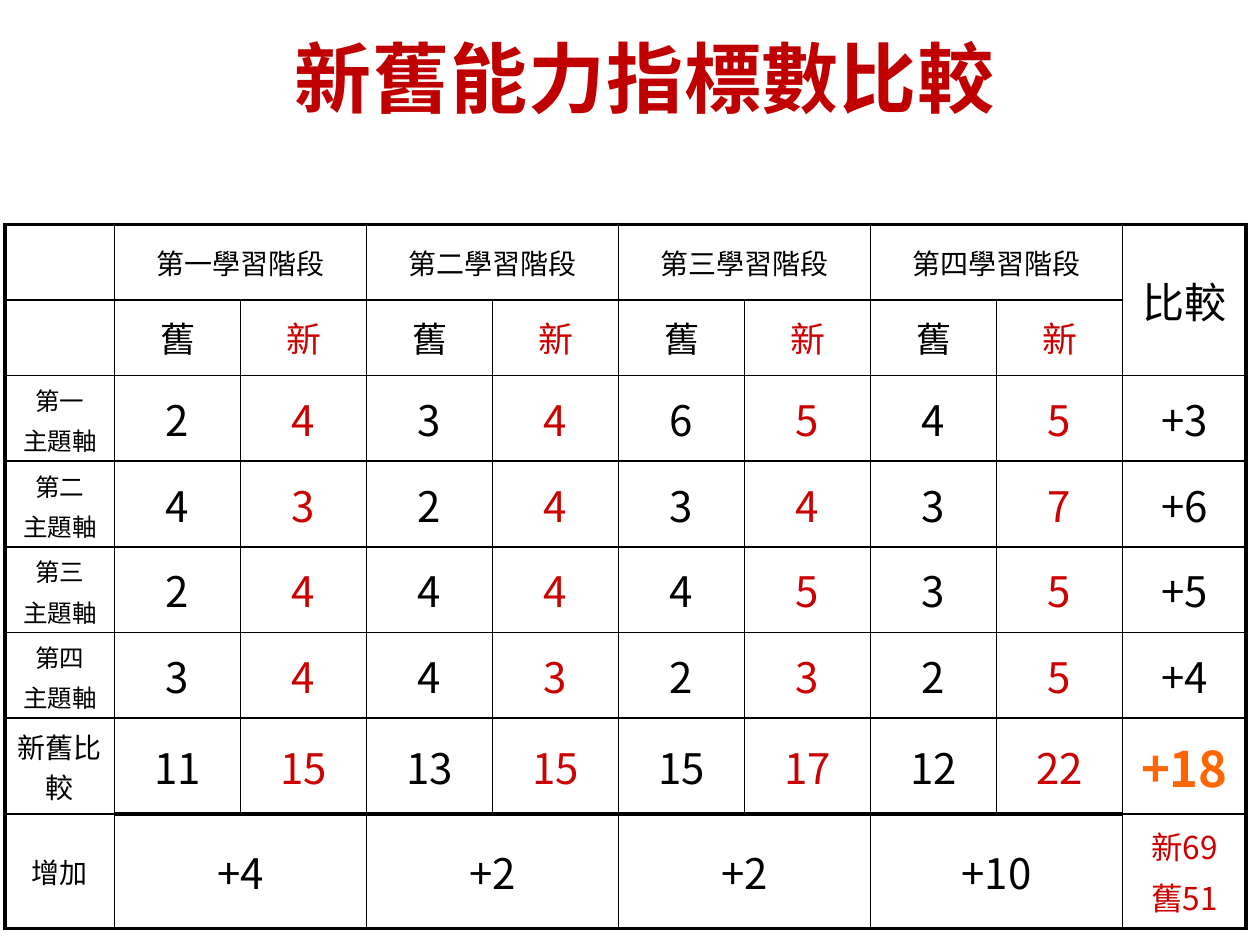
from pptx import Presentation
from pptx.dml.color import RGBColor
from pptx.enum.text import MSO_ANCHOR, PP_ALIGN
from pptx.oxml.ns import qn
from pptx.util import Inches, Pt
from lxml import etree

CENTER = PP_ALIGN.CENTER
MIDDLE = MSO_ANCHOR.MIDDLE

BLACK, RED, DARK_RED, ORANGE = "000000", "CC0000", "C00000", "FF6600"
COLS = [0.87] + [1] * 8 + [0.98]
ROWS = [0.6] * 2 + [0.68] * 4 + [0.76, 0.91]
STAGES = ["第一", "第二", "第三", "第四"]
COUNTS = [
    [2, 4, 3, 4, 6, 5, 4, 5, "+3"],
    [4, 3, 2, 4, 3, 4, 3, 7, "+6"],
    [2, 4, 4, 4, 4, 5, 3, 5, "+5"],
    [3, 4, 4, 3, 2, 3, 2, 5, "+4"],
]
TOTALS = [11, 15, 13, 15, 15, 17, 12, 22]
INCREASES = ["+4", "+2", "+2", "+10"]


def rgb(value):
    return RGBColor.from_string(value)


def write(tf, text, font, size, color=BLACK, bold=False, spacing=None):
    for i, line in enumerate(str(text).split("\n")):
        p = tf.paragraphs[0] if i == 0 else tf.add_paragraph()
        p.alignment = CENTER
        if i:
            p.space_before = Pt(size * 0.2)
        r = p.add_run()
        r.text = line
        r.font.name, r.font.size, r.font.bold = font, Pt(size), bold
        r.font.color.rgb = rgb(color)
        rPr = r.font._element
        etree.SubElement(rPr, qn("a:ea"), typeface=font)
        if spacing:
            rPr.set("spc", str(int(spacing * 100)))


class Deck:
    """Holds the style and the current slide."""

    title_font = "DejaVu Sans"
    body_font = "Noto Sans CJK SC"
    thin, thick = 1, 2.25

    def __init__(self, width, height):
        self.prs = Presentation()
        self.prs.slide_width, self.prs.slide_height = Inches(width), Inches(height)
        self.s = self.prs.slides.add_slide(self.prs.slide_layouts[6])

    def title(self, text, x, y, w, h):
        tf = self.s.shapes.add_textbox(Inches(x), Inches(y), Inches(w), Inches(h)).text_frame
        tf.word_wrap = True
        tf.vertical_anchor = MIDDLE
        write(tf, text, self.title_font, 44, DARK_RED, bold=True, spacing=0.5)

    def table(self, x, y, cols, rows):
        frame = self.s.shapes.add_table(len(rows), len(cols), Inches(x), Inches(y),
                                        Inches(sum(cols)), Inches(sum(rows)))
        table = frame.table
        table.first_row = table.horz_banding = False
        for column, width in zip(table.columns, cols):
            column.width = Inches(width)
        for row, height in zip(table.rows, rows):
            row.height = Inches(height)
        last_row, last_col = len(rows) - 1, len(cols) - 1
        for i in range(len(rows)):
            for j in range(len(cols)):
                inner = 0 < j < last_col
                self.borders(table.cell(i, j), {
                    "L": j == 0,
                    "R": j == last_col,
                    "T": i == 0 or (i == last_row and inner),
                    "B": i == last_row or (i == last_row - 1 and inner),
                })
        return table

    def borders(self, cell, heavy):
        tcPr = cell._tc.get_or_add_tcPr()
        for side, is_heavy in heavy.items():
            width = Pt(self.thick if is_heavy else self.thin)
            ln = etree.SubElement(tcPr, qn(f"a:ln{side}"), w=str(width))
            fill = etree.SubElement(ln, qn("a:solidFill"))
            etree.SubElement(fill, qn("a:srgbClr"), val=BLACK)
        cell.fill.background()

    def cell(self, table, row, col, text, size, color=BLACK, bold=False, span=(1, 1)):
        cell = table.cell(row, col)
        if span != (1, 1):
            cell.merge(table.cell(row + span[0] - 1, col + span[1] - 1))
        cell.vertical_anchor = MIDDLE
        write(cell.text_frame, text, self.body_font, size, color, bold)

    def pairs(self, table, row, values, size):
        for col, value in enumerate(values, 1):
            new = col % 2 == 0 and col < 9
            self.cell(table, row, col, value, size, RED if new else BLACK)


def main():
    deck = Deck(10, 7.5)
    deck.title("新舊能力指標數比較", 1.93, -0.02, 6.38, 1.25)
    table = deck.table(0.04, 1.78, COLS, ROWS)
    for i, (stage, increase) in enumerate(zip(STAGES, INCREASES)):
        col = 1 + 2 * i
        deck.cell(table, 0, col, stage + "學習階段", 16, span=(1, 2))
        deck.cell(table, 7, col, increase, 24, span=(1, 2))
        deck.cell(table, 2 + i, 0, stage + "\n主題軸", 14)
        deck.pairs(table, 2 + i, COUNTS[i], 24)
    deck.cell(table, 0, 9, "比較", 24, span=(2, 1))
    deck.pairs(table, 1, ["舊", "新"] * 4, 20)
    deck.cell(table, 6, 0, "新舊比較", 16)
    deck.pairs(table, 6, TOTALS, 24)
    deck.cell(table, 6, 9, "+18", 28, ORANGE, bold=True)
    deck.cell(table, 7, 0, "增加", 16)
    deck.cell(table, 7, 9, "新69\n舊51", 18, RED)
    deck.prs.save("out.pptx")


if __name__ == "__main__":
    main()
